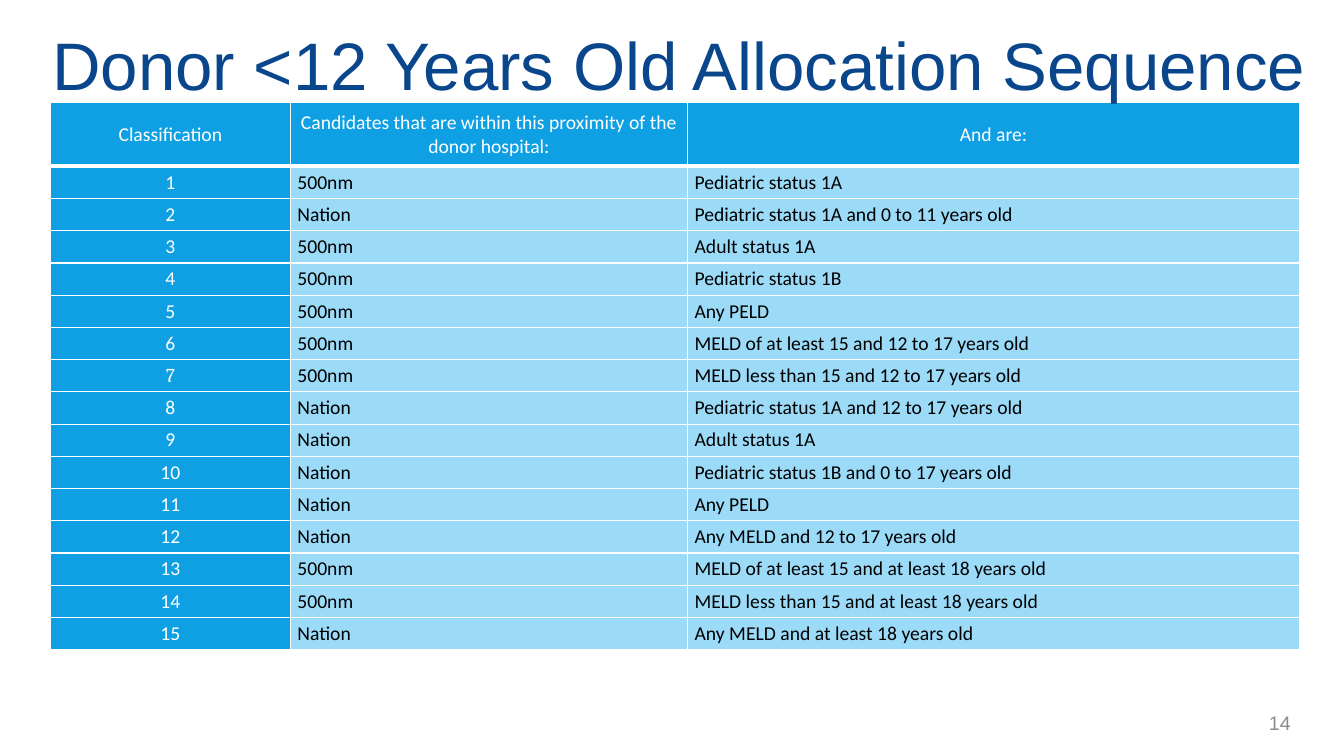
from lxml.etree import SubElement
from pptx import Presentation
from pptx.dml.color import RGBColor
from pptx.enum.text import MSO_ANCHOR, PP_ALIGN
from pptx.oxml.ns import qn
from pptx.util import Inches, Pt

TITLE = "Donor <12 Years Old Allocation Sequence"
PAGE_NUMBER = "14"
HEADINGS = (
    "Classification",
    "Candidates that are within this proximity of the donor hospital:",
    "And are:",
)
ALLOCATIONS = [
    ("500nm", "Pediatric status 1A"),
    ("Nation", "Pediatric status 1A and 0 to 11 years old"),
    ("500nm", "Adult status 1A"),
    ("500nm", "Pediatric status 1B"),
    ("500nm", "Any PELD"),
    ("500nm", "MELD of at least 15 and 12 to 17 years old"),
    ("500nm", "MELD less than 15 and 12 to 17 years old"),
    ("Nation", "Pediatric status 1A and 12 to 17 years old"),
    ("Nation", "Adult status 1A"),
    ("Nation", "Pediatric status 1B and 0 to 17 years old"),
    ("Nation", "Any PELD"),
    ("Nation", "Any MELD and 12 to 17 years old"),
    ("500nm", "MELD of at least 15 and at least 18 years old"),
    ("500nm", "MELD less than 15 and at least 18 years old"),
    ("Nation", "Any MELD and at least 18 years old"),
]
CAMBRIA_CLASSIFICATION = "7"
COLUMN_WIDTHS = (2.38, 3.94, 6.07)
HEADING_HEIGHT, ALLOCATION_HEIGHT = 0.63, 0.32
NAVY, BLUE, PALE_BLUE = "0A468C", "0FA0E4", "9BDBF8"
WHITE, BLACK, GREY = "FFFFFF", "000000", "8C8C8C"


def rgb(color):
    return RGBColor.from_string(color)


def write(frame, text, font, size, color, align):
    paragraph = frame.paragraphs[0]
    paragraph.text = text
    paragraph.alignment = align
    paragraph.font.name = font
    paragraph.font.size = Pt(size)
    paragraph.font.color.rgb = rgb(color)


def add_text(slide, area, text, size, color, align):
    frame = slide.shapes.add_textbox(*map(Inches, area)).text_frame
    frame.word_wrap = True
    frame.vertical_anchor = MSO_ANCHOR.MIDDLE
    write(frame, text, "Arial", size, color, align)


def add_borders(cell, bottom_width):
    properties = cell._tc.get_or_add_tcPr()
    for index, (side, width) in enumerate(
        (("L", 1), ("R", 1), ("T", 1), ("B", bottom_width))
    ):
        border = SubElement(properties, qn(f"a:ln{side}"), w=str(Pt(width)))
        fill = SubElement(border, qn("a:solidFill"))
        SubElement(fill, qn("a:srgbClr"), val=WHITE)
        properties.insert(index, border)


def fill_cell(cell, text, is_heading, is_classification):
    is_dark = is_heading or is_classification
    cell.fill.solid()
    cell.fill.fore_color.rgb = rgb(BLUE if is_dark else PALE_BLUE)
    cell.margin_left = cell.margin_right = Inches(0.07)
    cell.margin_top = cell.margin_bottom = 0
    cell.vertical_anchor = MSO_ANCHOR.MIDDLE
    write(
        cell.text_frame,
        text,
        "Cambria" if text == CAMBRIA_CLASSIFICATION else "Calibri",
        14,
        WHITE if is_dark else BLACK,
        PP_ALIGN.CENTER if is_dark else PP_ALIGN.LEFT,
    )
    add_borders(cell, 3 if is_heading else 1)


def add_sequence(slide):
    rows = [HEADINGS] + [
        (str(number), *allocation)
        for number, allocation in enumerate(ALLOCATIONS, 1)
    ]
    height = HEADING_HEIGHT + ALLOCATION_HEIGHT * len(ALLOCATIONS)
    sequence = slide.shapes.add_table(
        len(rows), len(HEADINGS), Inches(0.5), Inches(1.02),
        Inches(sum(COLUMN_WIDTHS)), Inches(height),
    ).table
    sequence.horz_banding = False
    for column, width in zip(sequence.columns, COLUMN_WIDTHS):
        column.width = Inches(width)
    for r, texts in enumerate(rows):
        sequence.rows[r].height = Inches(ALLOCATION_HEIGHT if r else HEADING_HEIGHT)
        for c, text in enumerate(texts):
            fill_cell(sequence.cell(r, c), text, r == 0, c == 0)
    sequence.first_row = False


def main():
    deck = Presentation()
    deck.slide_width, deck.slide_height = Inches(13.33), Inches(7.5)
    slide = deck.slides.add_slide(deck.slide_layouts[6])
    add_sequence(slide)
    add_text(slide, (0.42, 0.17, 12.74, 0.93), TITLE, 48, NAVY, PP_ALIGN.LEFT)
    add_text(slide, (10.64, 6.97, 2.26, 0.4), PAGE_NUMBER, 14, GREY, PP_ALIGN.RIGHT)
    deck.save("out.pptx")


if __name__ == "__main__":
    main()
